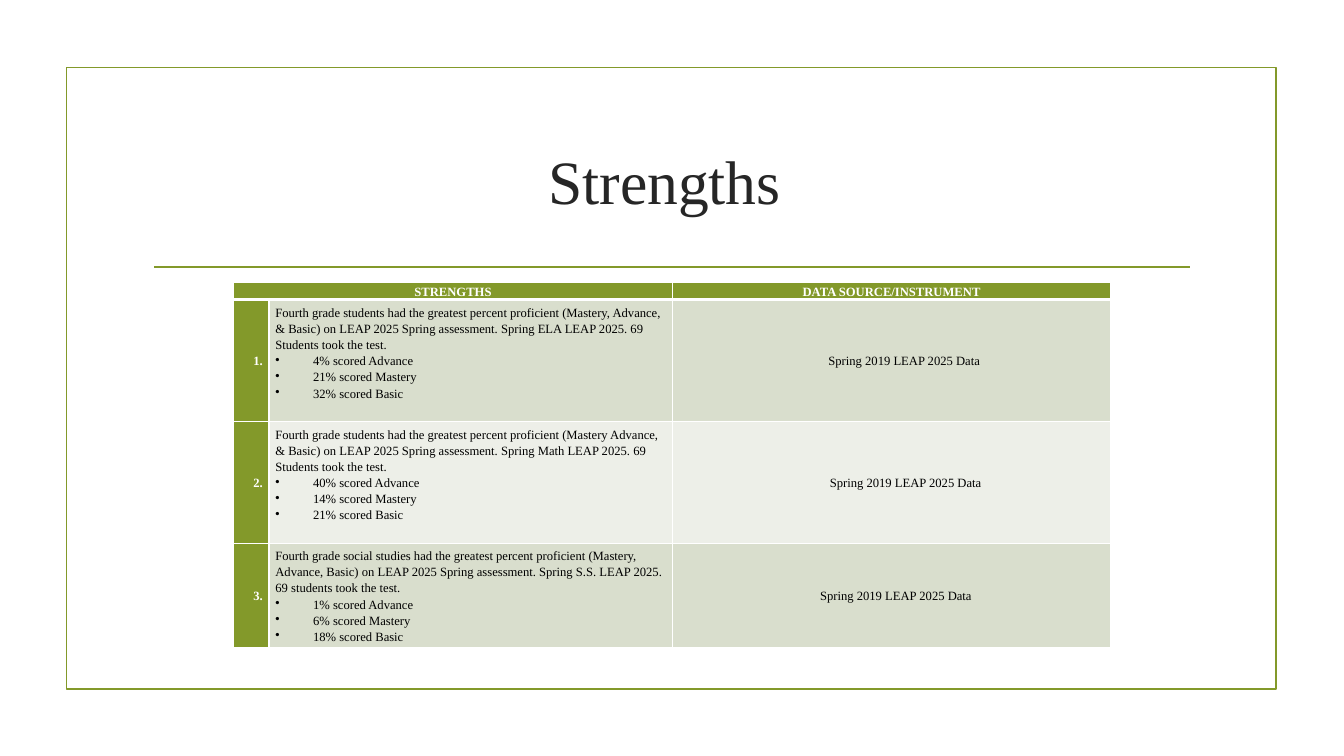
from lxml import etree
from pptx import Presentation
from pptx.dml.color import RGBColor
from pptx.enum.shapes import MSO_CONNECTOR, MSO_SHAPE
from pptx.enum.text import MSO_ANCHOR, PP_ALIGN
from pptx.oxml.ns import qn
from pptx.util import Cm, Pt

LEFT, CENTER, RIGHT = PP_ALIGN.LEFT, PP_ALIGN.CENTER, PP_ALIGN.RIGHT
MIDDLE = MSO_ANCHOR.MIDDLE
COLORS = {"green": "83992A", "sage": "D9DECD", "pale": "EDEFE8",
          "title": "262626", "black": "000000", "white": "FFFFFF"}
LINE = Pt(1.25)


def add_text(p, text, size, color, bold=False, align=LEFT):
    p.alignment = align
    r = p.add_run()
    r.text = text
    r.font.name = "Times New Roman"
    r.font.size = Pt(size)
    r.font.bold = bold
    r.font.color.rgb = RGBColor.from_string(COLORS[color])


def add_cell_text(p, text, color="black", bold=False, align=LEFT, indent=0, bullet=False):
    pPr = p._p.get_or_add_pPr()
    pPr.set("marL", str(Cm(indent)))
    pPr.set("indent", str(-Cm(indent) if bullet else 0))
    if bullet:
        etree.SubElement(pPr, qn("a:buChar"), char="•")
    p.line_spacing = 1.15
    add_text(p, text, 9, color, bold, align)


prs = Presentation()
prs.slide_width, prs.slide_height = Cm(33.87), Cm(19.05)
s = prs.slides.add_slide(prs.slide_layouts[6])

frame = s.shapes.add_shape(MSO_SHAPE.RECTANGLE, Cm(1.68), Cm(1.7), Cm(30.48), Cm(15.67))
frame.shadow.inherit = False
frame.fill.background()
frame.line.color.rgb = RGBColor.from_string(COLORS["green"])
frame.line.width = LINE

rule = s.shapes.add_connector(MSO_CONNECTOR.STRAIGHT, Cm(3.89), Cm(6.73), Cm(30), Cm(6.73))
rule.line.color.rgb = RGBColor.from_string(COLORS["green"])
rule.line.width = LINE
etree.SubElement(rule._element.spPr, qn("a:effectLst"))

title = s.shapes.add_textbox(Cm(3.61), Cm(2.72), Cm(26.67), Cm(3.63))
tf = title.text_frame
tf.word_wrap = True
tf.vertical_anchor = MIDDLE
add_text(tf.paragraphs[0], "Strengths ", 44, "title", align=CENTER)

strengths = [
    ("Fourth grade students had the greatest percent proficient (Mastery, Advance, & Basic) "
     "on LEAP 2025 Spring assessment. Spring ELA LEAP 2025. 69 Students took the test.",
     (4, 21, 32), "sage", 0.64, 0.4),
    ("Fourth grade students had the greatest percent proficient (Mastery Advance, & Basic) "
     "on LEAP 2025 Spring assessment. Spring Math LEAP 2025. 69 Students took the test.",
     (40, 14, 21), "pale", 0.71, 0.4),
    ("Fourth grade social studies had the greatest percent proficient (Mastery, Advance, Basic) "
     "on LEAP 2025 Spring assessment. Spring S.S. LEAP 2025. 69 students took the test.",
     (1, 6, 18), "sage", 0.22, 0),
]
levels = ("Advance", "Mastery", "Basic")
col_widths = (0.89, 10.16, 11.05)
row_heights = (0.43, 3.07, 3.07, 2.64)

table = s.shapes.add_table(4, 3, Cm(5.89), Cm(7.11), Cm(sum(col_widths)),
                           Cm(sum(row_heights))).table
for col, width in zip(table.columns, col_widths):
    col.width = Cm(width)
for row, height in zip(table.rows, row_heights):
    row.height = Cm(height)

for i, row in enumerate(table.rows):
    for j, cell in enumerate(row.cells):
        cell.margin_left = cell.margin_right = Cm(0.16)
        cell.margin_top = cell.margin_bottom = 0
        cell.vertical_anchor = MIDDLE
        tcPr = cell._tc.get_or_add_tcPr()
        for side in ("L", "R", "T", "B"):
            thick = (i, side) in ((0, "B"), (1, "T"))
            ln = etree.SubElement(tcPr, qn(f"a:ln{side}"), w=str(Pt(3 if thick else 1)))
            fill = etree.SubElement(ln, qn("a:solidFill"))
            etree.SubElement(fill, qn("a:srgbClr"), val=COLORS["white"])
        color = "green" if i == 0 or j == 0 else strengths[i - 1][2]
        cell.fill.solid()
        cell.fill.fore_color.rgb = RGBColor.from_string(COLORS[color])

table.cell(0, 0).merge(table.cell(0, 1))
for j, heading in ((0, "STRENGTHS"), (2, "DATA SOURCE/INSTRUMENT")):
    add_cell_text(table.cell(0, j).text_frame.paragraphs[0], heading, "white", True, CENTER)

for i, (summary, scores, _, source_indent, bottom) in enumerate(strengths, 1):
    number, strength, source = table.rows[i].cells
    add_cell_text(number.text_frame.paragraphs[0], f"{i}.", "white", True, RIGHT)
    strength.margin_bottom = Cm(bottom)
    tf = strength.text_frame
    add_cell_text(tf.paragraphs[0], summary)
    for score, level in zip(scores, levels):
        add_cell_text(tf.add_paragraph(), f"{score}% scored {level}", indent=0.95, bullet=True)
    add_cell_text(source.text_frame.paragraphs[0], "Spring 2019 LEAP 2025 Data",
                  align=CENTER, indent=source_indent)

prs.save("out.pptx")
